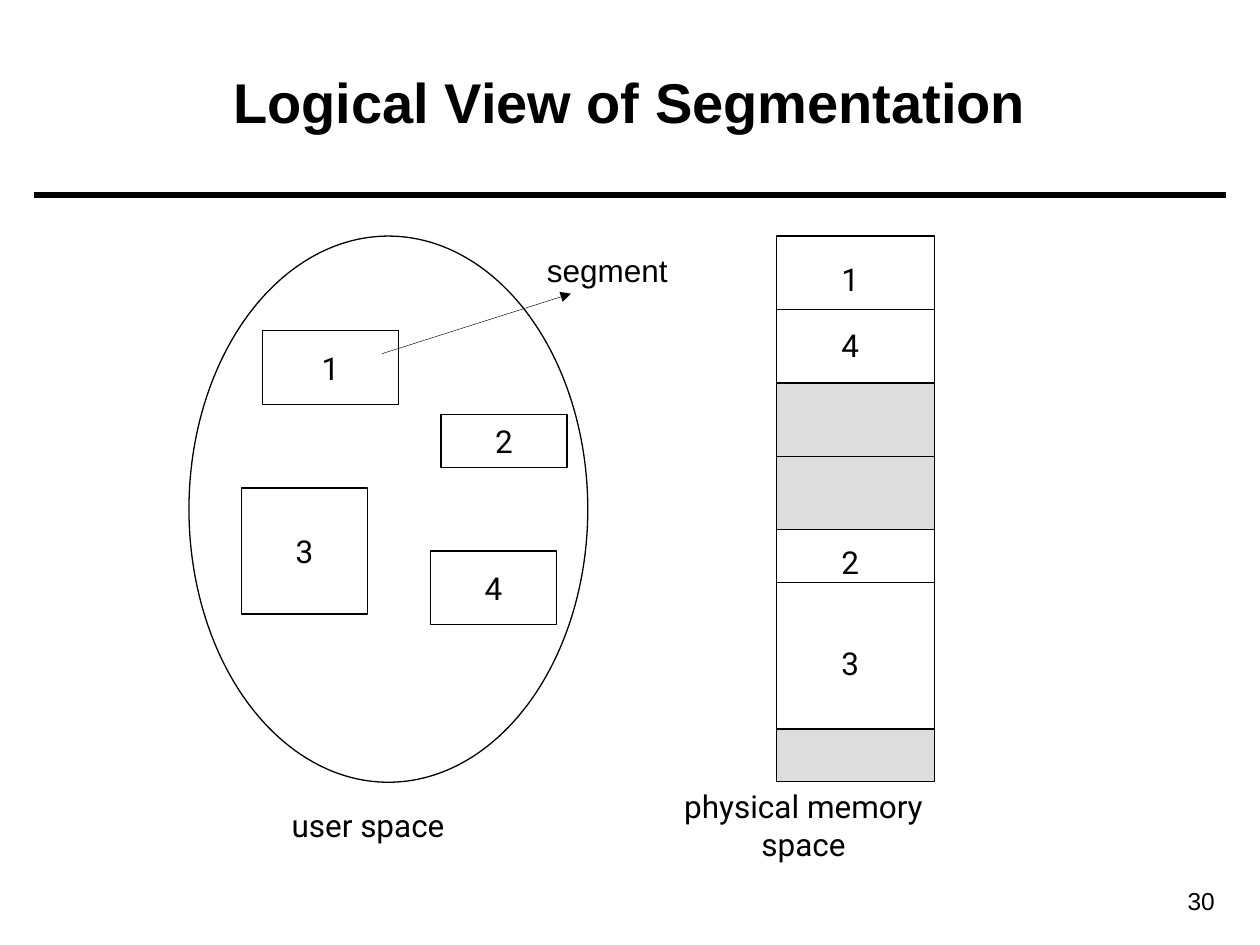
import pptx
import pptx.dml.color
import pptx.enum.shapes
import pptx.enum.text
import pptx.oxml
import pptx.oxml.ns
import pptx.util
from pptx.util import Cm

BLACK, WHITE, GREY = "000000", "FFFFFF", "DDDDDD"
SHAPES = pptx.enum.shapes.MSO_SHAPE
ALIGN = pptx.enum.text.PP_ALIGN
ANCHOR = pptx.enum.text.MSO_ANCHOR

# Segments in user space: label, left, top, width, height
SEGMENTS = [
    ("1", 5.29, 6.67, 2.75, 1.48),
    ("3", 4.87, 9.84, 2.54, 2.54),
    ("2", 8.89, 8.36, 2.54, 1.06),
    ("4", 8.68, 11.11, 2.54, 1.48),
]

# Physical memory from the top: height, fill, offset of the dividing line
MEMORY_LEFT, MEMORY_TOP, MEMORY_WIDTH = 15.66, 4.76, 3.18
MEMORY_BLOCKS = [
    (2.96, WHITE, 1.48),
    (2.96, GREY, 1.48),
    (4.02, WHITE, 1.06),
    (1.06, GREY, None),
]
MEMORY_LABELS = [("1", 5.11), ("4", 6.45), ("2", 10.82), ("3", 12.85)]


def color(value):
    return pptx.dml.color.RGBColor.from_string(value)


def apply_format(target, values):
    for name, value in values.items():
        setattr(target, name, value)


def write_text(shape, text, font="Roboto", size=18, bold=False,
               align=ALIGN.CENTER, anchor=ANCHOR.MIDDLE, wrap=False):
    frame = shape.text_frame
    apply_format(frame, {"word_wrap": wrap, "vertical_anchor": anchor})
    paragraph = frame.paragraphs[0]
    paragraph.text = text
    paragraph.alignment = align
    for run in paragraph.runs:
        apply_format(run.font, {"name": font, "size": pptx.util.Pt(size), "bold": bold})
        run.font.color.rgb = color(BLACK)


def add_text(slide, text, left, top, width, height, **options):
    box = slide.shapes.add_textbox(Cm(left), Cm(top), Cm(width), Cm(height))
    write_text(box, text, **options)


def add_outlined(slide, kind, left, top, width, height, fill=WHITE):
    shape = slide.shapes.add_shape(kind, Cm(left), Cm(top), Cm(width), Cm(height))
    shape.shadow.inherit = False
    shape.fill.solid()
    shape.fill.fore_color.rgb = color(fill)
    shape.line.color.rgb = color(BLACK)
    shape.line.width = pptx.util.Pt(0.75)
    return shape


def add_line(slide, x1, y1, x2, y2, width=0.75, arrow=False):
    line = slide.shapes.add_connector(
        pptx.enum.shapes.MSO_CONNECTOR.STRAIGHT, Cm(x1), Cm(y1), Cm(x2), Cm(y2))
    line.line.color.rgb = color(BLACK)
    line.line.width = pptx.util.Pt(width)
    properties = line._element.spPr
    if arrow:
        outline = properties.find(pptx.oxml.ns.qn("a:ln"))
        outline.append(pptx.oxml.parse_xml(
            f'<a:tailEnd {pptx.oxml.ns.nsdecls("a")} type="triangle"/>'))
    properties.append(pptx.oxml.parse_xml(
        f'<a:effectLst {pptx.oxml.ns.nsdecls("a")}/>'))


def add_user_space(slide):
    add_outlined(slide, SHAPES.OVAL, 3.81, 4.76, 8.04, 11.01)
    for label, *place in SEGMENTS:
        write_text(add_outlined(slide, SHAPES.RECTANGLE, *place), label)
    add_text(slide, "user space ", 5.61, 16.12, 3.78, 1.02)


def add_physical_memory(slide):
    top = MEMORY_TOP
    for height, fill, divider in MEMORY_BLOCKS:
        add_outlined(slide, SHAPES.RECTANGLE, MEMORY_LEFT, top, MEMORY_WIDTH, height, fill)
        if divider:
            y = top + divider
            add_line(slide, MEMORY_LEFT, y, MEMORY_LEFT + MEMORY_WIDTH, y)
        top += height
    for label, label_top in MEMORY_LABELS:
        add_text(slide, label, 16.71, label_top, 0.86, 1.02)
    add_text(slide, "physical memory\vspace", 12.63, 15.87, 7.14, 1.52)


def main():
    presentation = pptx.Presentation()
    apply_format(presentation, {"slide_width": Cm(25.4), "slide_height": Cm(19.05)})
    slide = presentation.slides.add_slide(presentation.slide_layouts[6])

    # Heading, rule and page number
    add_line(slide, 0.69, 3.93, 24.71, 3.93, width=3)
    add_text(slide, "30", 22.1, 17.73, 2.64, 0.86, font="Arial", size=14,
             align=ALIGN.RIGHT, anchor=ANCHOR.TOP, wrap=True)
    add_text(slide, "Logical View of Segmentation", 0.9, 0.44, 23.6, 3.18,
             font="Arial", size=32, bold=True, wrap=True)

    # Diagram
    add_user_space(slide)
    add_physical_memory(slide)

    # Callout
    add_line(slide, 7.7, 7.13, 11.51, 5.92, width=0.25, arrow=True)
    add_text(slide, "segment", 10.77, 4.93, 2.95, 1.02, font="Arial", anchor=ANCHOR.TOP)

    presentation.save("out.pptx")


if __name__ == "__main__":
    main()
